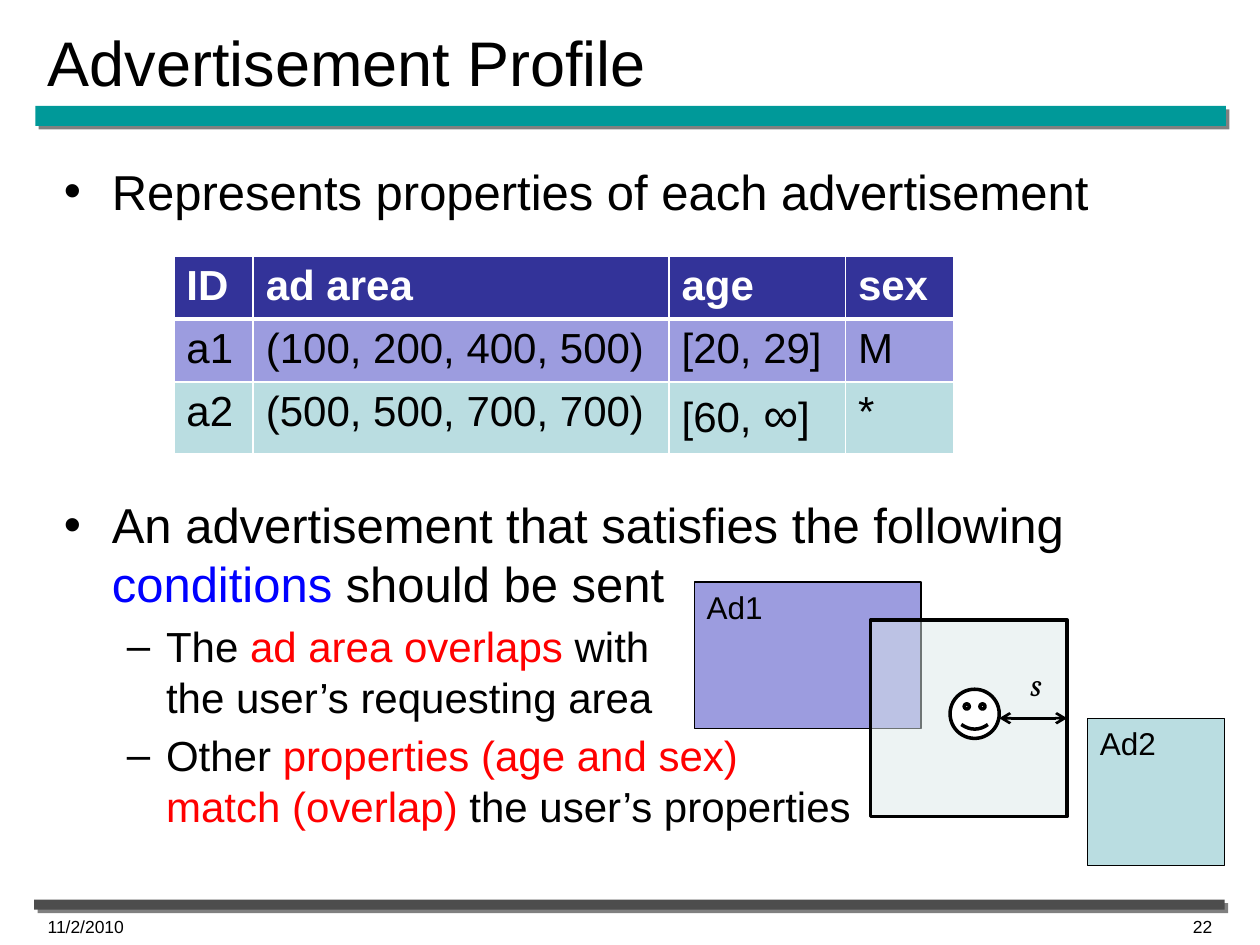
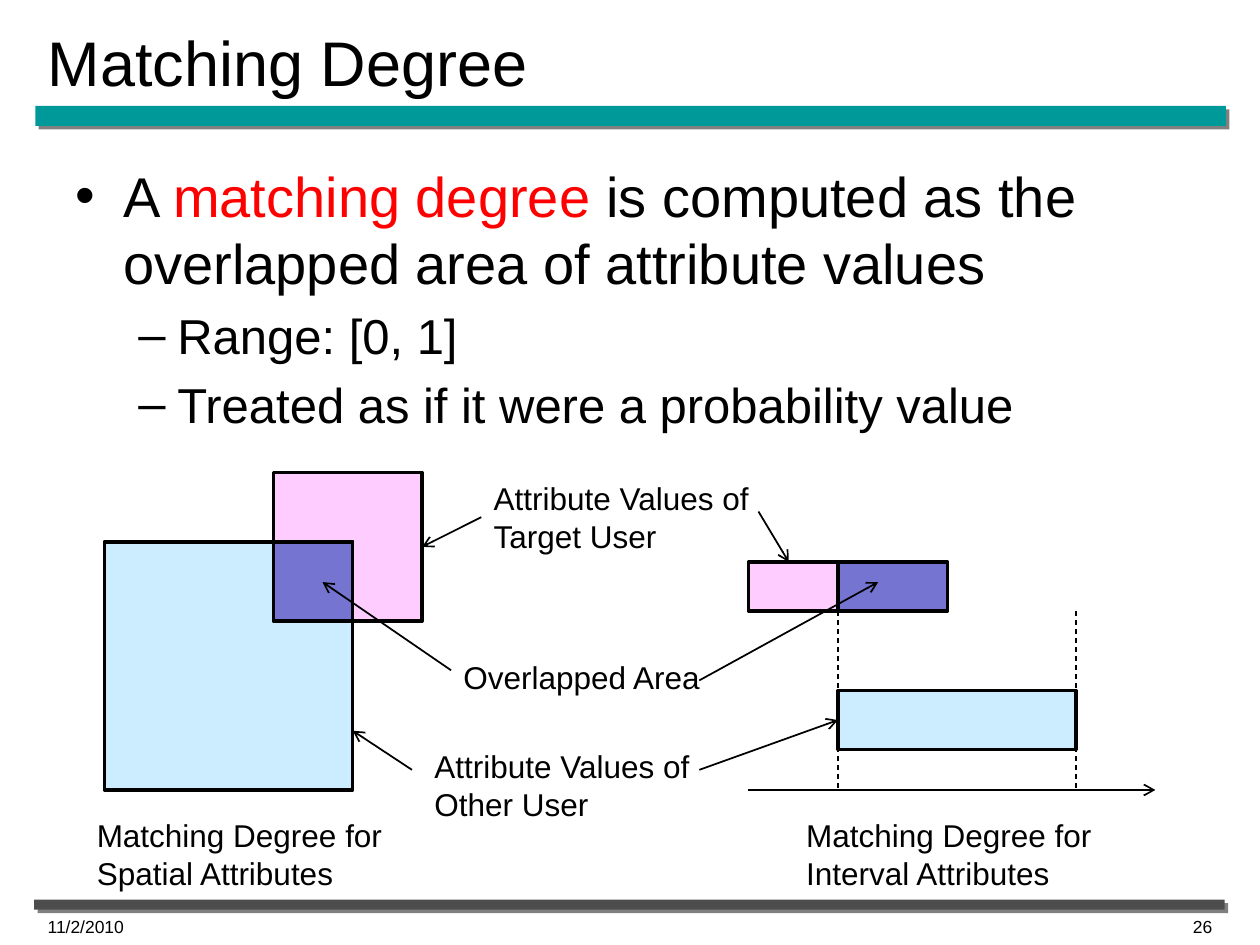
from lxml import etree
from pptx import Presentation
from pptx import util as u
from pptx.dml.color import RGBColor
from pptx.enum import dml, shapes, text
from pptx.oxml import ns

BLACK = RGBColor(0x00, 0x00, 0x00)
WHITE = RGBColor(0xFF, 0xFF, 0xFF)
TEAL = RGBColor(0x00, 0x99, 0x99)
GREY = RGBColor(0x4D, 0x4D, 0x4D)
NAVY = RGBColor(0x33, 0x33, 0x99)
LILAC = RGBColor(0x9C, 0x9C, 0xDF)
AQUA = RGBColor(0xBA, 0xDD, 0xE1)
MIST = RGBColor(0xDD, 0xE9, 0xE9)
PINK = RGBColor(0xFF, 0xCC, 0xFF)
SKY = RGBColor(0xCC, 0xEC, 0xFF)
VIOLET = RGBColor(0x75, 0x75, 0xD1)
RED = RGBColor(0xFF, 0x00, 0x00)
BLUE = RGBColor(0x00, 0x00, 0xFF)
RECT = shapes.MSO_SHAPE.RECTANGLE
SMILEY = shapes.MSO_SHAPE.SMILEY_FACE


def draw(slide, at, fill, width=0, kind=RECT):
    """Add a flat filled shape, outlined in black if a width is given."""
    shape = slide.shapes.add_shape(kind, *map(u.Inches, at))
    shape.shadow.inherit = False
    shape.fill.solid()
    shape.fill.fore_color.rgb = fill
    if width:
        shape.line.color.rgb = BLACK
        shape.line.width = u.Pt(width)
    else:
        shape.line.fill.background()
    return shape


def write(slide, at, words, size, wrap=True, face="Arial"):
    """Add a black text box."""
    box = slide.shapes.add_textbox(*map(u.Inches, at))
    frame = box.text_frame
    frame.text = words
    frame.word_wrap = wrap
    for para in frame.paragraphs:
        for run in para.runs:
            run.font.size = u.Pt(size)
            run.font.name = face
            run.font.color.rgb = BLACK
    return box


deck = Presentation()
deck.slide_width, deck.slide_height = u.Inches(10), u.Inches(7.5)
ads, match = [deck.slides.add_slide(deck.slide_layouts[6]) for _ in range(2)]

# Shared frame: bands with shadow, title, date and page number
for slide, title, page in ((ads, "Advertisement Profile", "22"),
                           (match, "Matching Degree", "26")):
    for at, fill in (((0.28, 0.84, 9.45, 0.16), TEAL),
                     ((0.27, 7.14, 9.45, 0.08), GREY)):
        band = draw(slide, at, fill)
        effect = band._element.spPr.find(ns.qn("a:effectLst"))
        shade = etree.SubElement(effect, ns.qn("a:outerShdw"), dist="35921",
                                 dir="2700000", algn="ctr", rotWithShape="0")
        etree.SubElement(shade, ns.qn("a:srgbClr"), val="808080")
    head = write(slide, (0.28, 0.13, 9.45, 0.71), title, 36)
    head.text_frame.vertical_anchor = text.MSO_ANCHOR.MIDDLE
    write(slide, (0.28, 7.22, 2.33, 0.28), "11/2/2010", 10)
    foot = write(slide, (7.39, 7.22, 2.33, 0.28), page, 10)
    foot.text_frame.paragraphs[0].alignment = text.PP_ALIGN.RIGHT

# Bullets: level, space before in points, coloured parts
bodies = (
    (ads, (0.41, 1.23, 9, 5.47), (28, 24), (
        (0, 5.6, [("Represents properties of each advertisement", BLACK)]),
        (0, 157, [("An advertisement that satisfies the following ", BLACK),
                  ("conditions", BLUE), (" should be sent", BLACK)]),
        (1, 4.8, [("The ", BLACK), ("ad area overlaps ", RED),
                  ("with\nthe user’s requesting area", BLACK)]),
        (1, 4.8, [("Other ", BLACK),
                  ("properties (age and sex)\nmatch (overlap) ", RED),
                  ("the user’s properties", BLACK)]))),
    (match, (0.5, 1.23, 9, 2.36), (32, 28), (
        (0, 6.4, [("A ", BLACK), ("matching degree ", RED),
                  ("is computed as the overlapped area of attribute values",
                   BLACK)]),
        (1, 5.6, [("Range: [0, 1]", BLACK)]),
        (1, 5.6, [("Treated as if it were a probability value", BLACK)]))),
)
for slide, at, sizes, items in bodies:
    frame = slide.shapes.add_textbox(*map(u.Inches, at)).text_frame
    frame.word_wrap = True
    for row, (level, gap, parts) in enumerate(items):
        para = frame.add_paragraph() if row else frame.paragraphs[0]
        para.space_before = u.Pt(gap)
        props = para._p.get_or_add_pPr()
        left, hang, mark = ((0.38, 0.38, "•"), (0.81, 0.31, "–"))[level]
        props.set("marL", str(u.Inches(left)))
        props.set("indent", str(-u.Inches(hang)))
        etree.SubElement(props, ns.qn("a:buFont"), typeface="Arial")
        etree.SubElement(props, ns.qn("a:buChar"), char=mark)
        for words, color in parts:
            for turn, line in enumerate(words.split("\n")):
                if turn:
                    para.add_line_break()
                run = para.add_run()
                run.text = line
                run.font.size = u.Pt(sizes[level])
                run.font.name = "Arial"
                run.font.color.rgb = color

# Advertisement table
rows = (("ID", "ad area", "age", "sex"),
        ("a1", "(100, 200, 400, 500)", "[20, 29]", "M"),
        ("a2", "(500, 500, 700, 700)", "[60, ∞]", "*"))
grid = ads.shapes.add_table(3, 4, *map(u.Inches, (1.38, 2.03, 6.19, 1.47))).table
for col, width in zip(grid.columns, (0.63, 3.3, 1.4, 0.86)):
    col.width = u.Inches(width)
for line, height in zip(grid.rows, (0.47, 0.47, 0.53)):
    line.height = u.Inches(height)
for r, row in enumerate(rows):
    for c, words in enumerate(row):
        cell = grid.cell(r, c)
        cell.fill.solid()
        cell.fill.fore_color.rgb = (NAVY, LILAC, AQUA)[r]
        para = cell.text_frame.paragraphs[0]
        pieces = ("[60, ", "∞", "]") if "∞" in words else (words,)
        for piece in pieces:
            run = para.add_run()
            run.text = piece
            run.font.size = u.Pt(28 if piece == "∞" else 24)
            run.font.name = "Arial"
            run.font.bold = r == 0
            run.font.color.rgb = BLACK if r else WHITE
        props = cell._tc.get_or_add_tcPr()
        for spot, side in enumerate(("lnL", "lnR", "lnT", "lnB")):
            thick = (r, side) in ((0, "lnB"), (1, "lnT"))
            edge = etree.Element(ns.qn("a:" + side),
                                 w=str(u.Pt(3 if thick else 1)))
            paint = etree.SubElement(edge, ns.qn("a:solidFill"))
            etree.SubElement(paint, ns.qn("a:srgbClr"), val=str(WHITE))
            props.insert(spot, edge)

# Ad areas and the user's requesting area
for name, at, fill in (("Ad1", (5.51, 4.62, 1.8, 1.16), LILAC),
                       ("Ad2", (8.63, 5.7, 1.09, 1.17), AQUA)):
    area = draw(ads, at, fill, 0.75)
    area.text_frame.text = name
    area.text_frame.vertical_anchor = text.MSO_ANCHOR.TOP
    para = area.text_frame.paragraphs[0]
    para.alignment = text.PP_ALIGN.LEFT
    font = para.runs[0].font
    font.size, font.name, font.color.rgb = u.Pt(18), "Arial", BLACK
zone = draw(ads, (6.91, 4.92, 1.56, 1.56), MIST, 2)
tint = zone._element.spPr.find(ns.qn("a:solidFill"))[0]
etree.SubElement(tint, ns.qn("a:alpha"), val="50000")
draw(ads, (7.54, 5.47, 0.39, 0.39), WHITE, 2, SMILEY)
reach = write(ads, (8.08, 5.23, 0.47, 0.4), "s", 18, face="Cambria")
reach.text_frame.paragraphs[0].runs[0].font.italic = True

# Spatial attributes: two squares and their overlap
target = draw(match, (2.17, 3.75, 1.18, 1.18), PINK, 2)
draw(match, (0.83, 4.3, 1.97, 1.97), SKY, 2)
draw(match, (2.17, 4.3, 0.63, 0.63), VIOLET, 2)

# Interval attributes: two bars and their overlap
draw(match, (5.94, 4.46, 1.57, 0.39), PINK, 2)
other = draw(match, (6.65, 5.48, 1.89, 0.47), SKY, 2)
draw(match, (6.65, 4.46, 0.87, 0.39), VIOLET, 2)

# Labels
label = write(match, (3.82, 3.75, 2.24, 0.71),
              "Attribute Values of\nTarget User", 18, False)
for at, words in (
        ((3.58, 5.17, 2.1, 0.4), "Overlapped Area"),
        ((3.35, 5.88, 2.24, 0.71), "Attribute Values of\nOther User"),
        ((0.67, 6.43, 2.56, 0.71), "Matching Degree for\nSpatial Attributes"),
        ((6.3, 6.43, 2.56, 0.71), "Matching Degree for\nInterval Attributes")):
    write(match, at, words, 18, False)

# Lines: ends, width, arrowheads, joined shapes with their sides
for slide, ends, width, tips, start, stop in (
        (ads, (7.93, 5.7, 8.47, 5.7), 1.5, ("headEnd", "tailEnd"),
         None, (zone, 3)),
        (match, (5.94, 6.27, 9.17, 6.27), 1, ("tailEnd",), None, None),
        (match, (6.65, 4.85, 6.65, 6.27), 0.75, (), None, None),
        (match, (8.54, 4.85, 8.54, 6.27), 0.75, (), None, None),
        (match, (6.02, 4.06, 6.26, 4.46), 1, ("tailEnd",), None, None),
        (match, (3.82, 4.1, 3.35, 4.34), 1, ("tailEnd",),
         (label, 1), (target, 3)),
        (match, (5.55, 5.4, 6.97, 4.62), 1, ("tailEnd",), None, None),
        (match, (3.58, 5.32, 2.56, 4.62), 1, ("tailEnd",), None, None),
        (match, (5.55, 6.11, 6.65, 5.72), 1, ("tailEnd",), None, (other, 1)),
        (match, (3.27, 6.11, 2.8, 5.8), 1, ("tailEnd",), None, None)):
    wire = slide.shapes.add_connector(shapes.MSO_CONNECTOR.STRAIGHT,
                                      *map(u.Inches, ends))
    wire.line.color.rgb = BLACK
    wire.line.width = u.Pt(width)
    if not tips:
        wire.line.dash_style = dml.MSO_LINE.DASH
    for tip in tips:
        etree.SubElement(wire.line._get_or_add_ln(), ns.qn("a:" + tip),
                         type="arrow")
    etree.SubElement(wire._element.spPr, ns.qn("a:effectLst"))
    if start:
        wire.begin_connect(*start)
    if stop:
        wire.end_connect(*stop)

deck.save("out.pptx")
